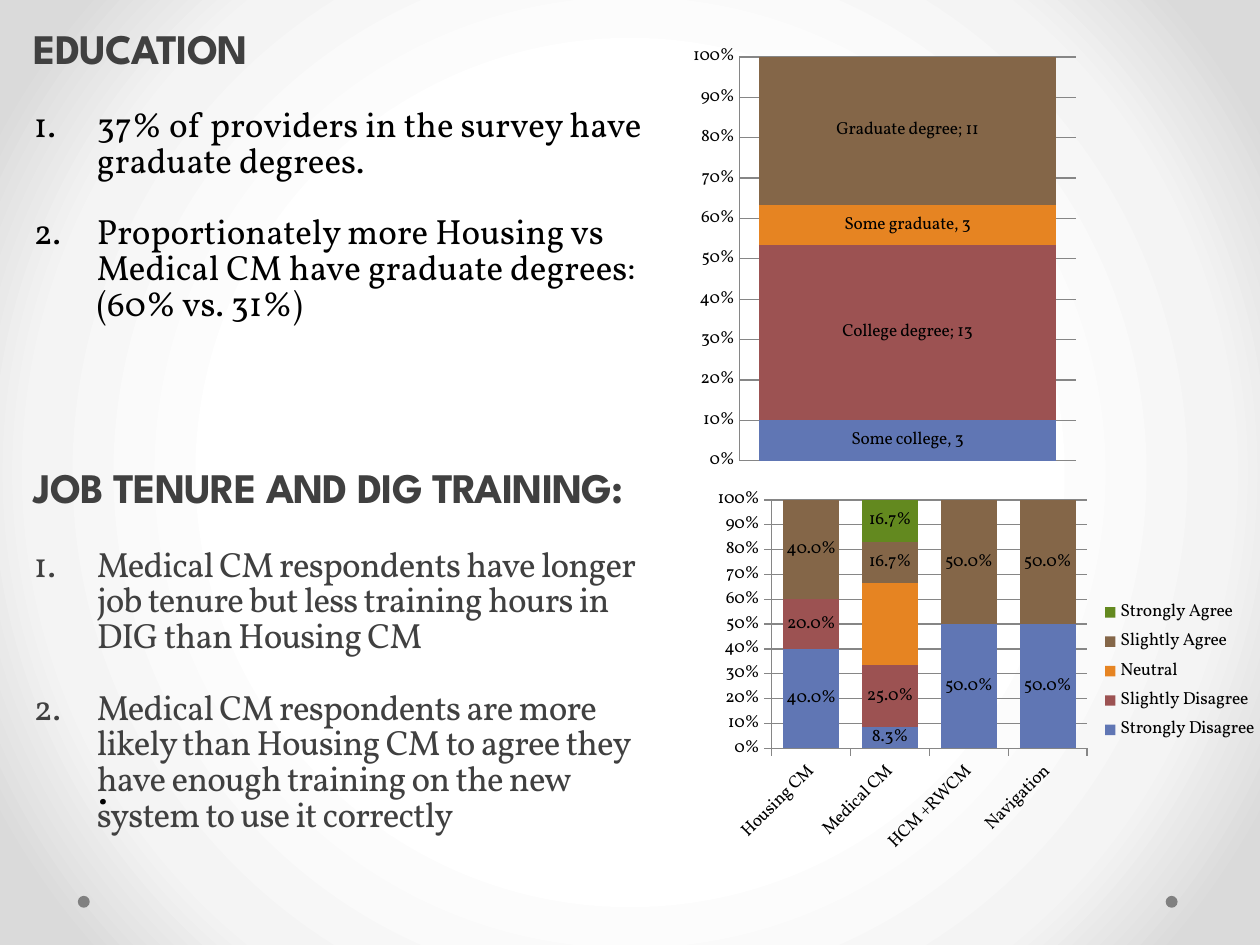
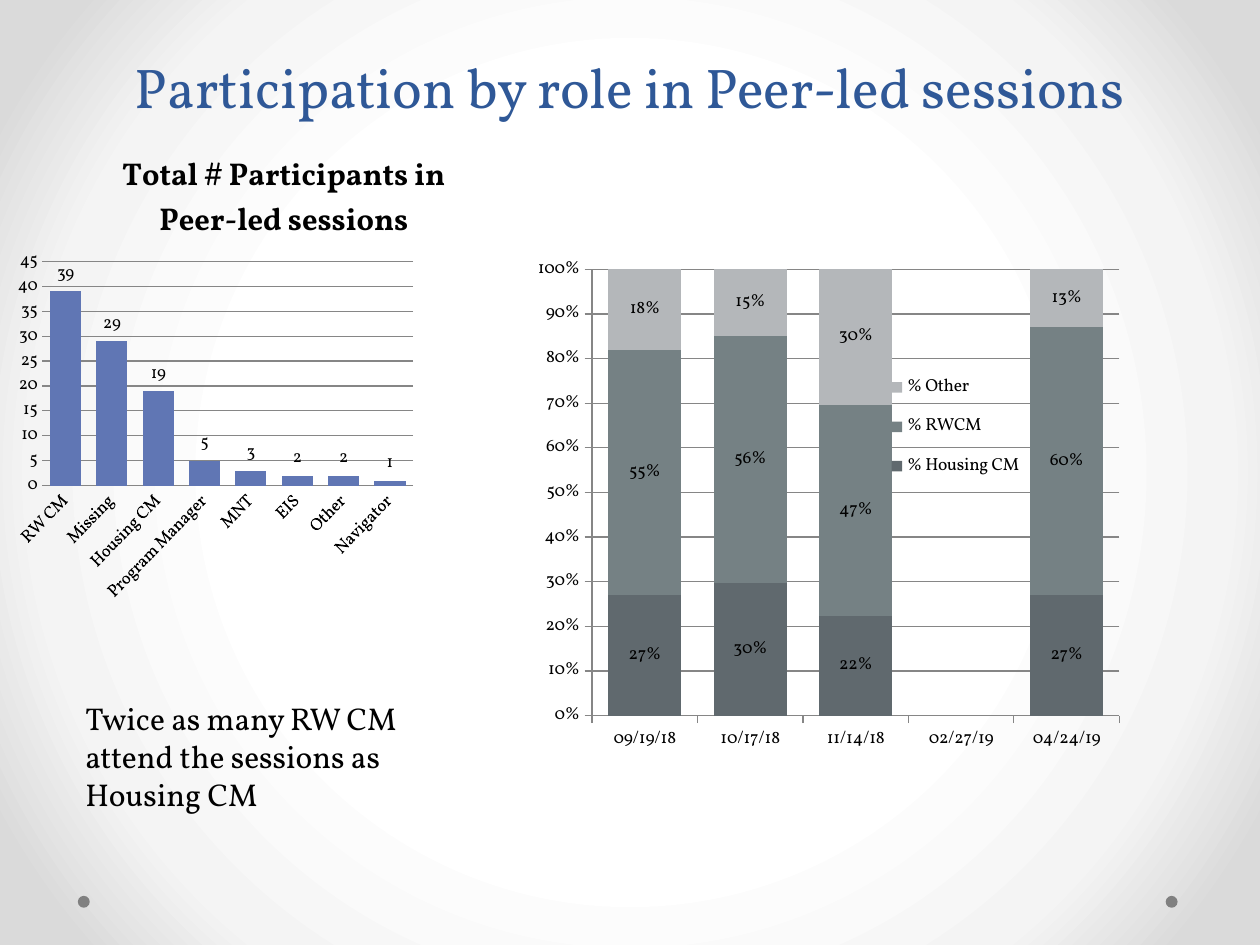
"""Build two survey slides on provider education, training and session participation."""
import pptx
import pptx.chart.data
import pptx.dml.color
import pptx.enum.chart
import pptx.enum.shapes
import pptx.enum.text
import pptx.oxml
import pptx.oxml.ns
import pptx.util

Cm, Pt = pptx.util.Cm, pptx.util.Pt
qn = pptx.oxml.ns.qn
XL = pptx.enum.chart
TOP = pptx.enum.text.MSO_ANCHOR.TOP
BOTTOM = pptx.enum.text.MSO_ANCHOR.BOTTOM
LEFT = pptx.enum.text.PP_ALIGN.LEFT
CENTER = pptx.enum.text.PP_ALIGN.CENTER

HEAD_FONT, BODY_FONT = "League Spartan", "Vollkorn"
COLORS = {
    "black": "000000", "heading": "404040", "title": "2F5897", "dot": "808080",
    "grid": "868686", "blue": "6076B4", "red": "9C5252", "orange": "E68422",
    "brown": "846648", "green": "63891F", "slate": "60696E", "steel": "758184",
    "silver": "B4B7BA",
}
BACKDROP = [(50, "FFFFFF"), (76, "F4F4F4"), (92, "DADADA")]
DOTS_X, DOT_Y, DOT_SIZE = (1.57, 23.5), 18.06, 0.24

PANELS = [
    ("EDUCATION", "black", 0, 5.0, [
        "37% of providers in the survey have graduate degrees.",
        "Proportionately more Housing vs Medical CM have graduate degrees: (60% vs. 31%)",
    ]),
    ("JOB TENURE AND DIG TRAINING:", "heading", -50, 6.2, [
        "Medical CM respondents have longer job tenure but less training hours in DIG "
        "than Housing CM",
        "Medical CM respondents are more likely than Housing CM to agree they have enough "
        "training on the new system to use it correctly",
    ]),
]
PANEL_X, PANEL_Y, PANEL_W, PANEL_STEP, LIST_DROP = 0.43, 0.48, 13.36, 8.86, 1.59

DEGREES = {
    "box": (13.97, 0.58, 8.89, 9.17), "plot": (0.094, 0.062, 0.772, 0.888),
    "cats": [""], "gap": 13, "labels": "0", "hide_cats": True, "names": True,
    "series": [
        ("Some college", [3], "blue"),
        ("College degree", [13], "red"),
        ("Some graduate", [3], "orange"),
        ("Graduate degree", [11], "brown"),
    ],
    "custom": {0: "Some college, 3", 2: "Some graduate, 3"},
}
AGREEMENT = {
    "box": (14.22, 9.68, 11.35, 7.7), "plot": (0.118, 0.052, 0.56, 0.65),
    "legend": (0.7, 0.3, 0.285, 0.4), "slanted": True, "ticks": True,
    "cats": ["Housing CM", "Medical CM", "HCM +RWCM", "Navigation"],
    "gap": 41, "labels": "0.0%;;", "unlabelled": ["Neutral"],
    "series": [
        ("Strongly Disagree", [0.4, 0.083, 0.5, 0.5], "blue"),
        ("Slightly Disagree", [0.2, 0.25, 0, 0], "red"),
        ("Neutral", [0, 0.33, 0, 0], "orange"),
        ("Slightly Agree", [0.4, 0.167, 0.5, 0.5], "brown"),
        ("Strongly Agree", [0, 0.167, 0, 0], "green"),
    ],
}
PARTICIPANTS = {
    "box": (0.2, 2.74, 8.89, 9.96), "plot": (0.076, 0.254, 0.868, 0.454),
    "title": "Total # Participants in Peer-led sessions", "title_at": (0.25, 0.02),
    "cats": ["RW CM", "Missing", "Housing CM", "Program Manager", "MNT", "EIS",
             "Other", "Navigator"],
    "gap": 49, "labels": "0", "slanted": True, "clustered": True,
    "series": [("Total # Participants", [39, 29, 19, 5, 3, 2, 2, 1], "blue")],
}
SESSIONS = {
    "box": (10.59, 4.88, 12.7, 10.8), "plot": (0.106, 0.051, 0.837, 0.833),
    "legend": (0.575, 0.22, 0.215, 0.25), "ticks": True,
    "cats": ["09/19/18", "10/17/18", "11/14/18", "02/27/19", "04/24/19"],
    "gap": 45, "labels": "0%",
    "series": [
        ("% Housing CM", [0.27, 0.3, 0.22, None, 0.27], "slate"),
        ("% RWCM", [0.55, 0.56, 0.47, None, 0.6], "steel"),
        ("% Other", [0.18, 0.15, 0.3, None, 0.13], "silver"),
    ],
}


def rgb(name):
    return pptx.dml.color.RGBColor.from_string(COLORS[name])


def style(font, size, color, name=BODY_FONT, bold=False):
    font.size, font.name, font.bold = Pt(size), name, bold
    font.color.rgb = rgb(color)


def fill_text(sp, box, lines, size, color, name=BODY_FONT, bold=False,
              anchor=TOP, align=LEFT, spacing=None, tracking=0):
    sp.left, sp.top, sp.width, sp.height = map(Cm, box)
    tf = sp.text_frame
    tf.text = "\n".join(lines)
    tf.word_wrap = True
    tf.auto_size = pptx.enum.text.MSO_AUTO_SIZE.NONE
    tf.vertical_anchor = anchor
    for p in tf.paragraphs:
        p.alignment, p.line_spacing, p.space_before = align, spacing, Pt(0)
        r = p.runs[0]
        style(r.font, size, color, name, bold)
        r._r.get_or_add_rPr().set("spc", str(tracking))
    return tf


def add_note(s, box, text, size):
    fill_text(s.shapes.add_textbox(*map(Cm, box)), box, [text], size, "black")


def add_panel(head, body, y, heading, color, tracking, height, items):
    fill_text(head, (PANEL_X, y, PANEL_W, 1.27), [heading], 24, "heading",
              HEAD_FONT, True, spacing=0.85, tracking=-50)
    tf = fill_text(body, (PANEL_X, y + LIST_DROP, PANEL_W, height), items, 20, color,
                   spacing=0.85, tracking=tracking)
    for i, p in enumerate(tf.paragraphs):
        p.space_before = Pt(20.5 if i else 0)
        pPr = p._p.get_or_add_pPr()
        pPr.set("marL", str(Cm(1.27)))
        pPr.set("indent", str(-Cm(1.27)))
        bullet = pPr.makeelement(qn("a:buAutoNum"), {"type": "arabicPeriod"})
        pPr.append(bullet)


def set_layout(parent, index, values, inner=False):
    for old in parent.findall(qn("c:layout")):
        parent.remove(old)
    target = '<c:layoutTarget val="inner"/>' if inner else ""
    modes = "".join(f'<c:{k}Mode val="edge"/>' for k in "xy")
    sizes = "".join(f'<c:{k} val="{v}"/>' for k, v in zip("xywh", values))
    parent.insert(index, pptx.oxml.parse_xml(
        f'<c:layout {pptx.oxml.ns.nsdecls("c")}><c:manualLayout>{target}{modes}{sizes}'
        "</c:manualLayout></c:layout>"))


def style_axes(chart, spec):
    cat, val = chart.category_axis, chart.value_axis
    tick = XL.XL_TICK_MARK.OUTSIDE if spec.get("ticks") else XL.XL_TICK_MARK.NONE
    for axis in (cat, val):
        axis.major_tick_mark, axis.minor_tick_mark = tick, XL.XL_TICK_MARK.NONE
        axis.format.line.color.rgb = rgb("grid")
        axis.format.line.width = Pt(0.75)
        style(axis.tick_labels.font, 10, "black")
    cat.has_major_gridlines = False
    cat.visible = not spec.get("hide_cats")
    val.has_major_gridlines = True
    val.major_gridlines.format.line.color.rgb = rgb("grid")
    val.major_gridlines.format.line.width = Pt(0.75)
    val.minimum_scale = 0
    clustered = spec.get("clustered")
    val.maximum_scale, val.major_unit = (45, 5) if clustered else (1, 0.1)
    val.tick_labels.number_format = "0" if clustered else "0%"
    val.tick_labels.number_format_is_linked = False
    if clustered:
        val.format.line.fill.background()
    if spec.get("slanted"):
        route = "/".join(map(qn, ("c:catAx", "c:txPr", "a:bodyPr")))
        chart.element.find(".//" + route).set("rot", "-2700000")


def style_series(chart, spec):
    for i, (ser, (name, _, color)) in enumerate(zip(chart.plots[0].series, spec["series"])):
        ser.format.fill.solid()
        ser.format.fill.fore_color.rgb = rgb(color)
        if name in spec.get("unlabelled", []):
            continue
        labels = ser.data_labels
        labels.show_value = True
        labels.show_series_name = spec.get("names", False)
        labels.number_format, labels.number_format_is_linked = spec["labels"], False
        style(labels.font, 10, "black")
        if spec.get("clustered"):
            labels.position = XL.XL_LABEL_POSITION.OUTSIDE_END
        if i in spec.get("custom", {}):
            tf = ser.points[0].data_label.text_frame
            tf.text = spec["custom"][i]
            style(tf.paragraphs[0].runs[0].font, 10, "black")
    if spec.get("names"):
        for flag in list(chart.element.iter(qn("c:showBubbleSize"))):
            separator = flag.makeelement(qn("c:separator"), {})
            separator.text = "; "
            flag.addnext(separator)


def add_bars(s, spec):
    data = pptx.chart.data.CategoryChartData()
    data.categories = spec["cats"]
    for name, values, _ in spec["series"]:
        data.add_series(name, values)
    clustered = spec.get("clustered")
    kind = XL.XL_CHART_TYPE.COLUMN_CLUSTERED if clustered else XL.XL_CHART_TYPE.COLUMN_STACKED_100
    chart = s.shapes.add_chart(kind, *map(Cm, spec["box"]), data).chart
    style(chart.font, 10, "black")
    plot = chart.plots[0]
    plot.gap_width, plot.overlap = spec["gap"], -25 if clustered else 100
    plot.vary_by_categories = False
    style_axes(chart, spec)
    style_series(chart, spec)
    set_layout(chart.element.find(".//" + qn("c:plotArea")), 0, spec["plot"], True)
    chart.has_title = "title" in spec
    if chart.has_title:
        tf = chart.chart_title.text_frame
        tf.text = spec["title"]
        style(tf.paragraphs[0].runs[0].font, 18, "black", bold=True)
        set_layout(chart.element.find(".//" + qn("c:title")), 1, spec["title_at"])
    chart.has_legend = "legend" in spec
    if chart.has_legend:
        chart.legend.position = XL.XL_LEGEND_POSITION.RIGHT
        chart.legend.include_in_layout = False
        set_layout(chart.element.find(".//" + qn("c:legend")), 1, spec["legend"])


def style_master(prs, s):
    master = prs.slide_master
    master.background.fill.solid()
    bg = master.element.find(".//" + qn("p:bgPr"))
    stops = "".join(f'<a:gs pos="{pos * 1000}"><a:srgbClr val="{color}"/></a:gs>'
                    for pos, color in BACKDROP)
    bg.replace(bg[0], pptx.oxml.parse_xml(
        f'<a:gradFill {pptx.oxml.ns.nsdecls("a")} rotWithShape="1"><a:gsLst>{stops}</a:gsLst>'
        '<a:path path="circle"><a:fillToRect l="50000" t="50000" r="50000" b="50000"/>'
        "</a:path></a:gradFill>"))
    for x in DOTS_X:
        dot = s.shapes.add_shape(pptx.enum.shapes.MSO_SHAPE.OVAL,
                                 *map(Cm, (x, DOT_Y, DOT_SIZE, DOT_SIZE)))
        dot.shadow.inherit = False
        dot.fill.solid()
        dot.fill.fore_color.rgb = rgb("dot")
        dot.line.fill.background()
        master.shapes.element.append(dot.element)


def main():
    prs = pptx.Presentation()
    prs.slide_width, prs.slide_height = Cm(25.4), Cm(19.05)

    s = prs.slides.add_slide(prs.slide_layouts[4])
    style_master(prs, s)
    ph = {sp.placeholder_format.idx: sp for sp in s.placeholders}
    ph[1].element.getparent().remove(ph[1].element)
    for i, (head, body) in enumerate([(ph[0], ph[2]), (ph[3], ph[4])]):
        add_panel(head, body, PANEL_Y + i * PANEL_STEP, *PANELS[i])
    add_note(s, (1.73, 15.24, 12.7, 1.27), ".", 24)
    add_bars(s, DEGREES)
    add_bars(s, AGREEMENT)

    s = prs.slides.add_slide(prs.slide_layouts[5])
    fill_text(s.shapes.title, (1.27, 0.76, 22.86, 1.78),
              ["Participation by role in Peer-led sessions"], 32, "title",
              anchor=BOTTOM, align=CENTER, spacing=Pt(58))
    add_bars(s, PARTICIPANTS)
    add_note(s, (1.47, 13.97, 7.62, 2.57),
             "Twice as many RW CM attend the sessions as Housing CM", 18)
    add_bars(s, SESSIONS)
    prs.save("out.pptx")


if __name__ == "__main__":
    main()
